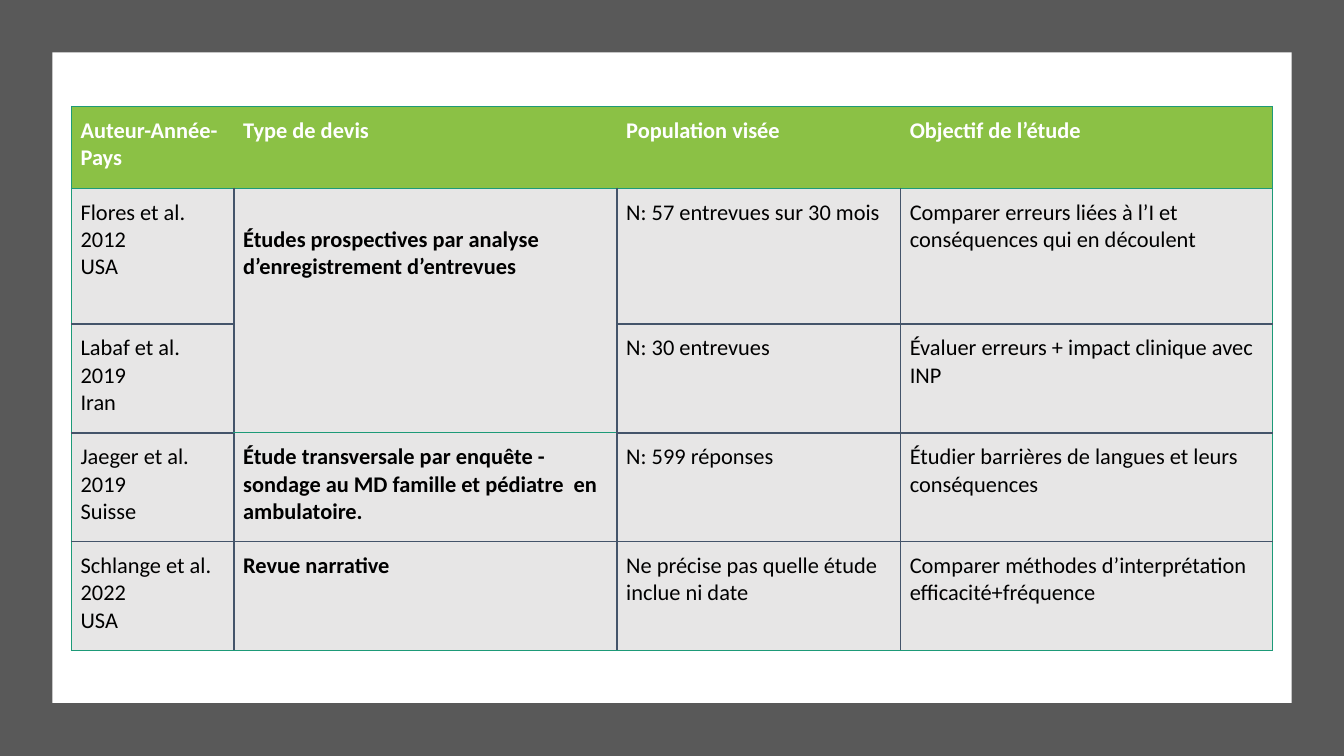
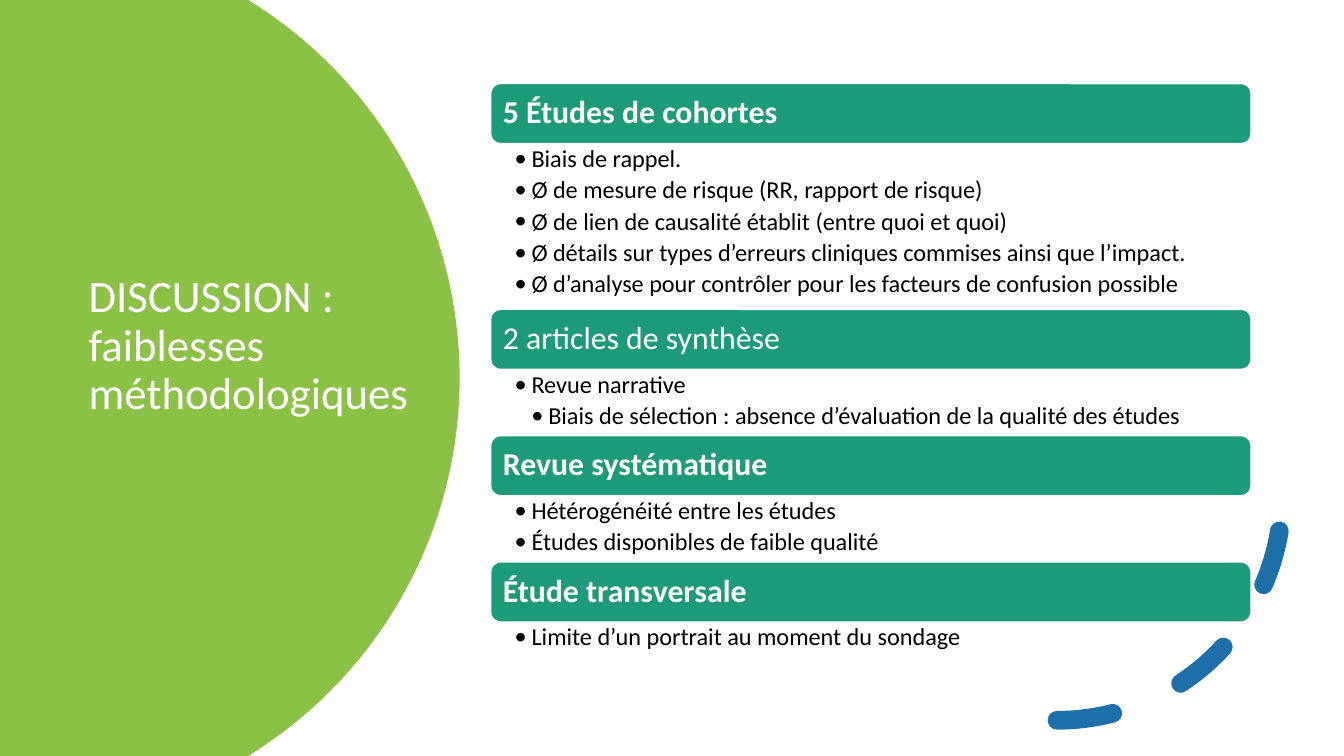
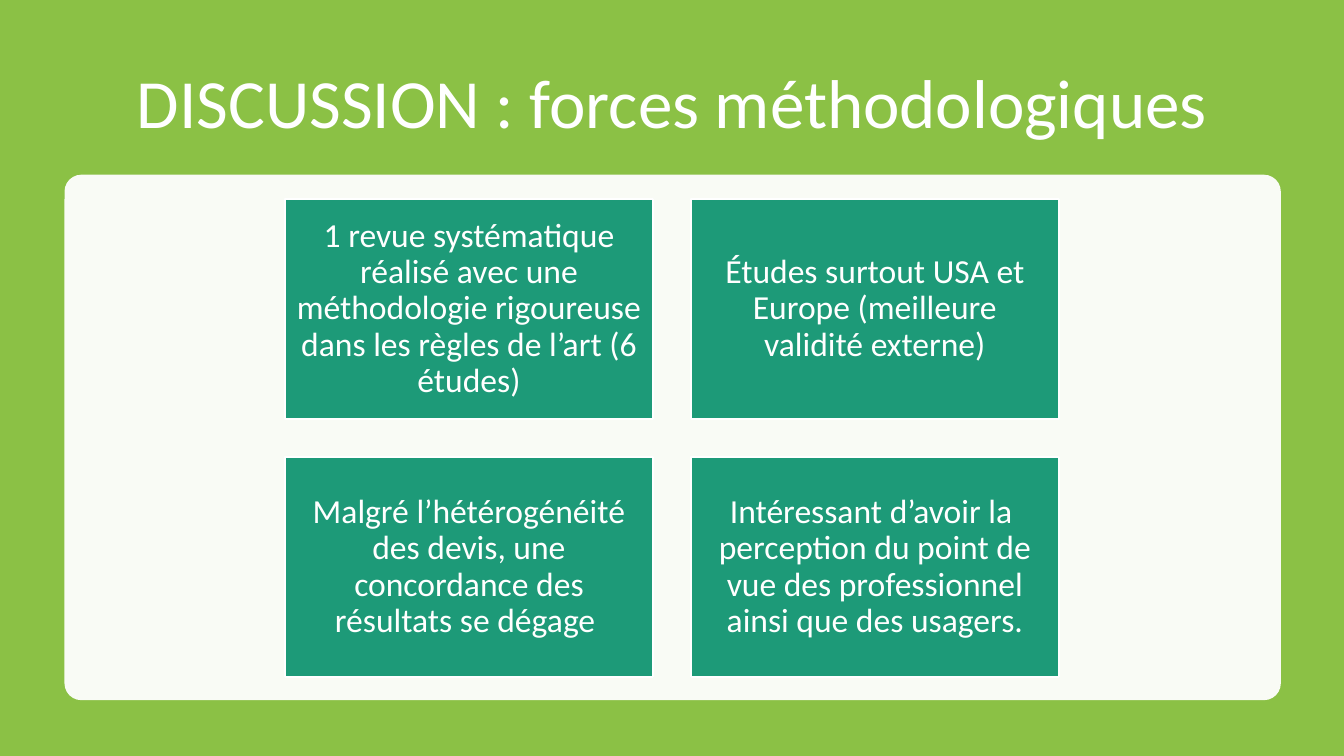
import math
from dataclasses import dataclass
from typing import Optional

from lxml import etree
from pptx import Presentation
from pptx.dml.color import RGBColor
from pptx.enum import dml, shapes, text
from pptx.oxml import ns
from pptx.util import Inches, Pt

# Shared look
FONT = "Calibri"
WHITE = RGBColor(0xFF, 0xFF, 0xFF)
BLACK = RGBColor(0x00, 0x00, 0x00)
GREEN = RGBColor(0x8B, 0xC1, 0x45)
TEAL = RGBColor(0x1D, 0x9A, 0x78)
BLUE = RGBColor(0x1D, 0x6F, 0xA9)
SLATE = RGBColor(0x44, 0x54, 0x6A)
CHARCOAL = RGBColor(0x59, 0x59, 0x59)
PALE_GREY = RGBColor(0xE7, 0xE6, 0xE6)

WIDTH = 10
HEIGHT = WIDTH * 9 / 16
LINE_SPACING = 0.9
TITLE_ONLY, BLANK = 5, 6
RECT = shapes.MSO_SHAPE.RECTANGLE
ROUNDED = shapes.MSO_SHAPE.ROUNDED_RECTANGLE
LEFT, CENTER = text.PP_ALIGN.LEFT, text.PP_ALIGN.CENTER


@dataclass(frozen=True)
class Box:
    left: float
    top: float
    width: float
    height: float

    def lengths(self) -> tuple:
        return tuple(Inches(v) for v in (self.left, self.top, self.width, self.height))


@dataclass(frozen=True)
class Bullet:
    wording: str
    level: int = 1


@dataclass(frozen=True)
class Section:
    heading: str
    body_height: float
    bullets: tuple
    bold: bool = True


@dataclass(frozen=True)
class Edge:
    color: RGBColor
    points: float


FULL_SLIDE = Box(0, 0, WIDTH, HEIGHT)
OUTER_EDGE = Edge(TEAL, 0.5)
INNER_EDGE = Edge(SLATE, 1)

# Content of the study table; line breaks separate paragraphs
STUDY_COLUMNS = (1.21, 2.85, 2.11, 2.77)
STUDY_ROWS = (0.61, 1.01, 0.81, 0.81, 0.81)
DESIGN_COLUMN = 1
STUDIES = (
    ("Auteur-Année-Pays", "Type de devis", "Population visée", "Objectif de l’étude"),
    ("Flores et al.\n2012\nUSA",
     "Études prospectives par analyse d’enregistrement d’entrevues",
     "N: 57 entrevues sur 30 mois",
     "Comparer erreurs liées à l’I et conséquences qui en découlent"),
    ("Labaf et al.\n2019\nIran", "", "N: 30 entrevues",
     "Évaluer erreurs + impact clinique avec INP"),
    ("Jaeger et al.\n2019\nSuisse",
     "Étude transversale par enquête -\nsondage au MD famille et pédiatre  en ambulatoire.",
     "N: 599 réponses",
     "Étudier barrières de langues et leurs conséquences"),
    ("Schlange et al.\n2022\nUSA", "Revue narrative",
     "Ne précise pas quelle étude inclue ni date",
     "Comparer méthodes d’interprétation efficacité+fréquence"),
)

WEAKNESSES = (
    Section("5 Études de cohortes", 1.23, (
        Bullet("Biais de rappel."),
        Bullet("Ø de mesure de risque (RR, rapport de risque)"),
        Bullet("Ø de lien de causalité établit (entre quoi et quoi)"),
        Bullet("Ø détails sur types d’erreurs cliniques commises ainsi que l’impact."),
        Bullet("Ø d’analyse pour contrôler pour les facteurs de confusion possible"))),
    Section("2 articles de synthèse", 0.49, (
        Bullet("Revue narrative"),
        Bullet("Biais de sélection : absence d’évaluation de la qualité des études", 2)),
        bold=False),
    Section("Revue systématique", 0.49, (
        Bullet("Hétérogénéité entre les études"),
        Bullet("Études disponibles de faible qualité"))),
    Section("Étude transversale", 0.31, (
        Bullet("Limite d’un portrait au moment du sondage"),)),
)

STRENGTHS = (
    "1 revue systématique réalisé avec une méthodologie rigoureuse dans les règles de l’art (6 études)",
    "Études surtout USA et Europe (meilleure validité externe)",
    "Malgré l’hétérogénéité des devis, une concordance des résultats se dégage ",
    "Intéressant d’avoir la  perception du point de vue des professionnel ainsi que des usagers.",
)


# Shared drawing helpers
def set_font(paragraph, size: float, color: RGBColor, bold: bool = False) -> None:
    font = paragraph.font
    font.name, font.size, font.bold = FONT, Pt(size), bold
    font.color.rgb = color


def set_margins(holder, left: float, top: float, right: float, bottom: float) -> None:
    holder.margin_left, holder.margin_top = Inches(left), Inches(top)
    holder.margin_right, holder.margin_bottom = Inches(right), Inches(bottom)


def paint(shape, fill: RGBColor, outline: Optional[RGBColor] = None) -> None:
    shape.shadow.inherit = False
    shape.fill.solid()
    shape.fill.fore_color.rgb = fill
    if outline is None:
        shape.line.fill.background()
    else:
        shape.line.color.rgb = outline
        shape.line.width = Pt(1)


def add_panel(slide, kind, box: Box, fill: RGBColor, outline: Optional[RGBColor] = None):
    panel = slide.shapes.add_shape(kind, *box.lengths())
    paint(panel, fill, outline)
    return panel


def add_label(panel, wording: str, size: float, align, bold: bool = False) -> None:
    frame = panel.text_frame
    frame.word_wrap = True
    frame.vertical_anchor = text.MSO_ANCHOR.MIDDLE
    set_margins(frame, 0.07, 0.07, 0.07, 0.07)
    label = frame.paragraphs[0]
    label.text, label.alignment, label.line_spacing = wording, align, LINE_SPACING
    set_font(label, size, WHITE, bold)


def place_title(slide, wording: str, box: Box, size: float, align,
                bottom: float = 0.05) -> None:
    title = slide.shapes.title
    title.left, title.top, title.width, title.height = box.lengths()
    frame = title.text_frame
    frame.text = wording
    frame.word_wrap = True
    frame.auto_size = text.MSO_AUTO_SIZE.NONE
    frame.vertical_anchor = text.MSO_ANCHOR.MIDDLE
    set_margins(frame, 0.1, 0.05, 0.1, bottom)
    heading = frame.paragraphs[0]
    heading.alignment, heading.line_spacing = align, LINE_SPACING
    set_font(heading, size, WHITE)
    # Bring the title in front of the panels already drawn
    slide.shapes._spTree.append(title._element)


# Slide 1: study table
def cell_edges(row: int, col: int) -> dict:
    def horizontal(line: int) -> Edge:
        around_merge = col == DESIGN_COLUMN and line in (2, 3)
        outer = line in (0, 1, len(STUDY_ROWS)) or around_merge
        return OUTER_EDGE if outer else INNER_EDGE

    def vertical(line: int) -> Optional[Edge]:
        if line in (0, len(STUDY_COLUMNS)):
            return OUTER_EDGE
        return INNER_EDGE if row else None

    return {"lnL": vertical(col), "lnR": vertical(col + 1),
            "lnT": horizontal(row), "lnB": horizontal(row + 1)}


def draw_edges(cell, edges: dict) -> None:
    properties = cell._tc.get_or_add_tcPr()
    for side, edge in edges.items():
        line = etree.SubElement(properties, ns.qn(f"a:{side}"))
        if edge is None:
            etree.SubElement(line, ns.qn("a:noFill"))
            continue
        line.set("w", str(Pt(edge.points)))
        fill = etree.SubElement(line, ns.qn("a:solidFill"))
        etree.SubElement(fill, ns.qn("a:srgbClr")).set("val", str(edge.color))


def build_studies(prs) -> None:
    slide = prs.slides.add_slide(prs.slide_layouts[BLANK])
    add_panel(slide, RECT, FULL_SLIDE, CHARCOAL)
    add_panel(slide, RECT, Box(0.39, 0.39, 9.22, 4.84), WHITE)

    area = Box(0.53, 0.79, sum(STUDY_COLUMNS), sum(STUDY_ROWS))
    studies = slide.shapes.add_table(
        len(STUDY_ROWS), len(STUDY_COLUMNS), *area.lengths()).table
    for column, width in zip(studies.columns, STUDY_COLUMNS):
        column.width = Inches(width)
    for row, height in zip(studies.rows, STUDY_ROWS):
        row.height = Inches(height)

    for r, study in enumerate(STUDIES):
        for c, wording in enumerate(study):
            cell = studies.cell(r, c)
            draw_edges(cell, cell_edges(r, c))
            cell.fill.solid()
            cell.fill.fore_color.rgb = PALE_GREY if r else GREEN
            set_margins(cell, 0.07, 0.08, 0.05, 0.1)
            cell.text = wording
            for paragraph in cell.text_frame.paragraphs:
                set_font(paragraph, 12, BLACK if r else WHITE,
                         bold=r == 0 or c == DESIGN_COLUMN)

    # The first design covers two studies and starts one line lower
    shared_design = studies.cell(1, DESIGN_COLUMN)
    shared_design.merge(studies.cell(2, DESIGN_COLUMN))
    shared_design.margin_top = Inches(0.28)


# Slide 2: weaknesses
def add_green_disc(slide) -> None:
    radius, center_x, center_y, steps = 3.3, 0.12, HEIGHT / 2, 80
    reach = math.asin(center_y / radius)
    angles = [reach * (2 * i / steps - 1) for i in range(steps + 1)]
    rim = [(Inches(center_x + radius * math.cos(a)),
            Inches(center_y + radius * math.sin(a))) for a in angles]
    outline = slide.shapes.build_freeform(0, 0)
    outline.add_line_segments(rim + [(0, Inches(HEIGHT))])
    paint(outline.convert_to_shape(), GREEN)


def add_dashed_arc(slide) -> None:
    arc = slide.shapes.add_shape(
        shapes.MSO_SHAPE.ARC, *Box(6.19, 2.01, 3.35, 3.35).lengths())
    arc.shadow.inherit = False
    arc.fill.background()
    arc.line.color.rgb = BLUE
    arc.line.width = Pt(10)
    arc.line.dash_style = dml.MSO_LINE.DASH
    properties = arc._element.spPr
    properties.find(ns.qn("a:ln")).set("cap", "rnd")
    properties.find(ns.qn("a:xfrm")).set("flipV", "1")


def add_bullets(slide, box: Box, bullets: tuple) -> None:
    frame = slide.shapes.add_textbox(*box.lengths()).text_frame
    frame.word_wrap = True
    set_margins(frame, 0.18, 0.02, 0.13, 0.02)
    for i, bullet in enumerate(bullets):
        paragraph = frame.add_paragraph() if i else frame.paragraphs[0]
        paragraph.text, paragraph.level = bullet.wording, bullet.level
        paragraph.line_spacing, paragraph.space_after = LINE_SPACING, Pt(2.7)
        set_font(paragraph, 13, BLACK)
        properties = paragraph._p.get_or_add_pPr()
        properties.set("marL", str(Inches(bullet.level / 8)))
        properties.set("indent", str(Inches(-1 / 8)))
        run_defaults = properties.find(ns.qn("a:defRPr"))
        run_defaults.addprevious(etree.Element(ns.qn("a:buFont"), typeface=FONT))
        run_defaults.addprevious(etree.Element(ns.qn("a:buChar"), char="•"))


def build_weaknesses(prs) -> None:
    slide = prs.slides.add_slide(prs.slide_layouts[TITLE_ONLY])
    add_green_disc(slide)
    place_title(slide, "DISCUSSION : faiblesses méthodologiques",
                Box(0.56, 0.95, 2.62, 3.66), 24, LEFT, bottom=0.45)
    add_dashed_arc(slide)

    left, top, width, band_height = 3.65, 0.62, 5.66, 0.45
    for section in WEAKNESSES:
        band = add_panel(slide, ROUNDED, Box(left, top, width, band_height), TEAL, WHITE)
        add_label(band, section.heading, 17, LEFT, section.bold)
        top += band_height
        add_bullets(slide, Box(left, top, width, section.body_height), section.bullets)
        top += section.body_height


# Slide 3: strengths
def build_strengths(prs) -> None:
    slide = prs.slides.add_slide(prs.slide_layouts[TITLE_ONLY])
    add_panel(slide, RECT, FULL_SLIDE, GREEN)
    place_title(slide, "DISCUSSION : forces méthodologiques",
                Box(0.69, 0.38, 8.62, 0.82), 37, CENTER)

    backdrop = add_panel(slide, ROUNDED, Box(0.48, 1.3, 9.05, 3.91), WHITE)
    backdrop.adjustments[0] = 0.032
    color = backdrop._element.spPr.find(ns.qn("a:solidFill"))[0]
    etree.SubElement(color, ns.qn("a:alpha")).set("val", "95000")

    card_width, card_height, gap = 2.74, 1.64, 0.28
    for i, strength in enumerate(STRENGTHS):
        row, col = divmod(i, 2)
        box = Box(2.12 + col * (card_width + gap), 1.48 + row * (card_height + gap),
                  card_width, card_height)
        card = add_panel(slide, RECT, box, TEAL, WHITE)
        add_label(card, strength, 18, CENTER)


def main() -> None:
    prs = Presentation()
    prs.slide_width, prs.slide_height = Inches(WIDTH), Inches(HEIGHT)
    build_studies(prs)
    build_weaknesses(prs)
    build_strengths(prs)
    prs.save("out.pptx")


if __name__ == "__main__":
    main()
